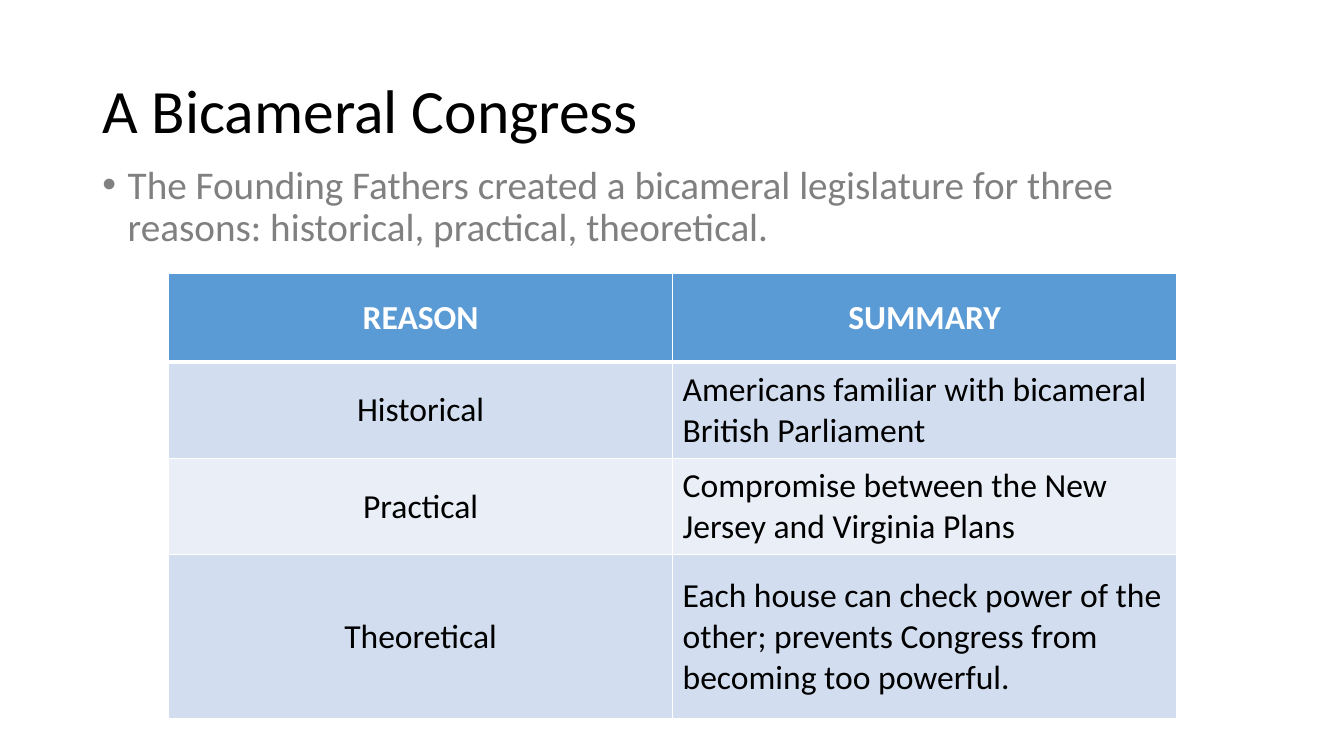
from lxml import etree
from pptx import Presentation
from pptx import util as u
from pptx.dml.color import RGBColor
from pptx.enum import text
from pptx.oxml import ns

TITLE = "A Bicameral Congress"
POINT = ("The Founding Fathers created a bicameral legislature for three "
         "reasons: historical, practical, theoretical.")
ROWS = [
    ("REASON", "SUMMARY"),
    ("Historical", "Americans familiar with bicameral British Parliament"),
    ("Practical", "Compromise between the New Jersey and Virginia Plans"),
    ("Theoretical", "Each house can check power of the other; "
                    "prevents Congress from becoming too powerful."),
]
TALL = [2.23, 2.43, 2.43, 4.14]
WIDE = 12.7

BLACK = RGBColor(0x00, 0x00, 0x00)
WHITE = RGBColor(0xFF, 0xFF, 0xFF)
GRAY = RGBColor(0x80, 0x80, 0x80)
BLUE = RGBColor(0x5B, 0x9B, 0xD5)
BANDS = [RGBColor(0xEA, 0xEF, 0xF7), RGBColor(0xD2, 0xDE, 0xEF)]
FONT = "Calibri"


def add_run(para, words, size, color, bold=False):
    run = para.add_run()
    run.text = words
    font = run.font
    font.name, font.size, font.bold = FONT, u.Pt(size), bold
    font.color.rgb = color


def add_box(slide, top, height, anchor):
    box = slide.shapes.add_textbox(u.Cm(2.33), u.Cm(top), u.Cm(29.21), u.Cm(height))
    frame = box.text_frame
    frame.word_wrap = True
    frame.vertical_anchor = anchor
    para = frame.paragraphs[0]
    para.line_spacing = 0.9
    return para


def add_bullet(para, indent):
    props = para._p.get_or_add_pPr()
    props.set("marL", str(indent))
    props.set("indent", str(-indent))
    font = etree.SubElement(props, ns.qn("a:buFont"))
    font.set("typeface", "Arial")
    etree.SubElement(props, ns.qn("a:buChar")).set("char", "•")


def add_edge(cell, side, width):
    props = cell._tc.get_or_add_tcPr()
    line = etree.SubElement(props, ns.qn("a:ln" + side), w=str(u.Pt(width)))
    fill = etree.SubElement(line, ns.qn("a:solidFill"))
    etree.SubElement(fill, ns.qn("a:srgbClr")).set("val", str(WHITE))


def fill_cell(cell, words, row, col):
    head = row == 0
    edges = {"L": 1, "R": 1, "T": 3 if row == 1 else 1, "B": 3 if head else 1}
    for side, width in edges.items():
        add_edge(cell, side, width)
    cell.fill.solid()
    cell.fill.fore_color.rgb = BLUE if head else BANDS[row % 2]
    cell.vertical_anchor = text.MSO_ANCHOR.MIDDLE
    para = cell.text_frame.paragraphs[0]
    mid = head or col == 0
    para.alignment = text.PP_ALIGN.CENTER if mid else text.PP_ALIGN.LEFT
    add_run(para, words, 24, WHITE if head else BLACK, head)


def main():
    deck = Presentation()
    deck.slide_width, deck.slide_height = u.Cm(33.87), u.Cm(19.05)
    slide = deck.slides.add_slide(deck.slide_layouts[6])

    title = add_box(slide, 1.01, 3.68, text.MSO_ANCHOR.MIDDLE)
    add_run(title, TITLE, 44, BLACK)

    point = add_box(slide, 4.05, 12.09, text.MSO_ANCHOR.TOP)
    add_bullet(point, u.Cm(0.64))
    add_run(point, POINT, 28, GRAY)

    table = slide.shapes.add_table(
        len(ROWS), len(ROWS[0]), u.Cm(4.25), u.Cm(6.89),
        u.Cm(WIDE * len(ROWS[0])), u.Cm(sum(TALL))).table
    for col in table.columns:
        col.width = u.Cm(WIDE)
    for row, (pair, tall) in enumerate(zip(ROWS, TALL)):
        table.rows[row].height = u.Cm(tall)
        for col, words in enumerate(pair):
            fill_cell(table.cell(row, col), words, row, col)

    deck.save("out.pptx")


if __name__ == "__main__":
    main()
